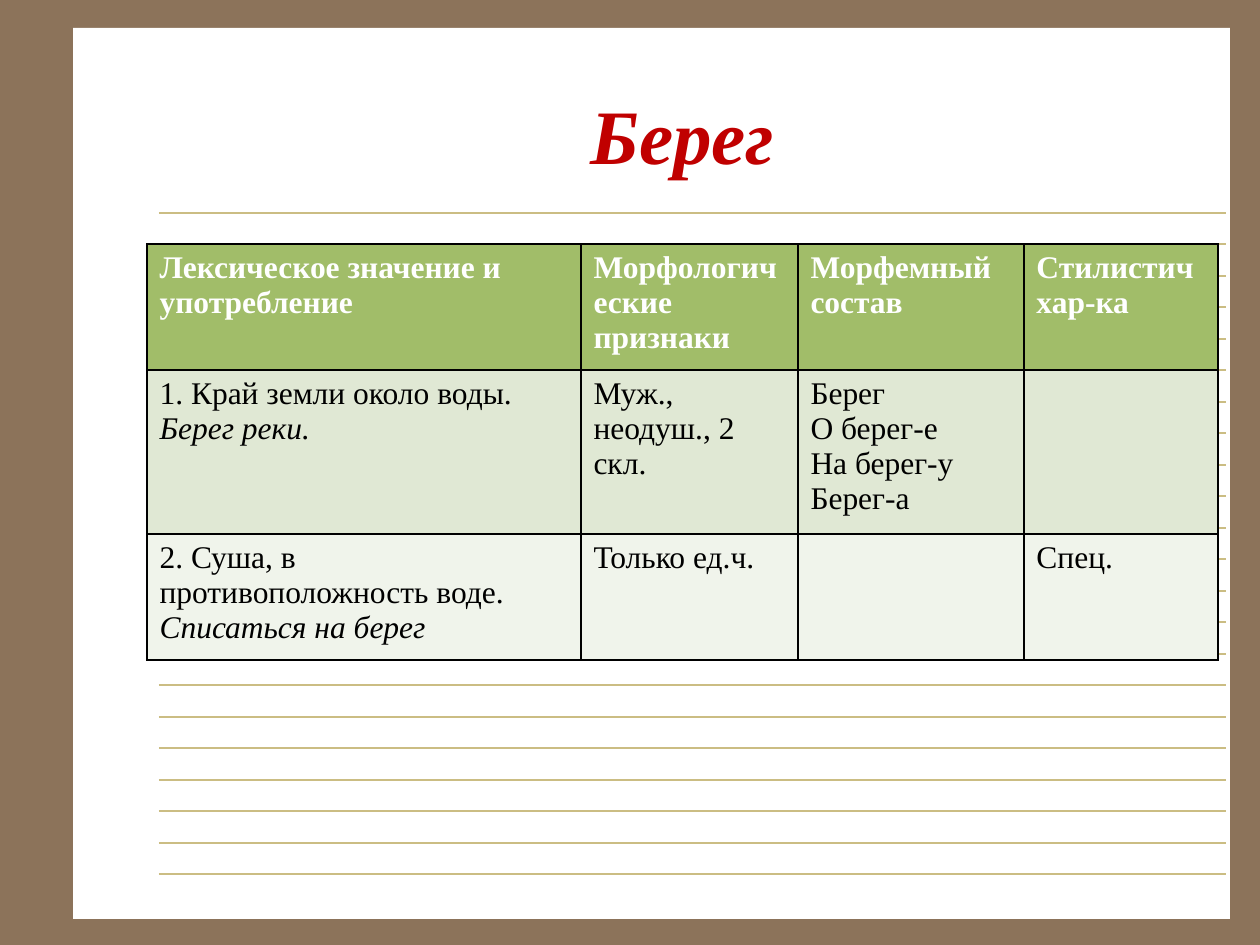
from pptx import Presentation
from pptx import util as u
from pptx.dml.color import RGBColor
from pptx.enum import shapes, text
from pptx.oxml import parse_xml
from pptx.oxml.ns import nsdecls

PX = 914400 // 126  # EMU per pixel
FONT = "Times New Roman"

BROWN = RGBColor(0x8C, 0x73, 0x5A)
WHITE = RGBColor(0xFF, 0xFF, 0xFF)
BLACK = RGBColor(0x00, 0x00, 0x00)
RULE = RGBColor(0xCB, 0xBD, 0x83)
RED = RGBColor(0xC0, 0x00, 0x00)
GREEN = RGBColor(0xA1, 0xBD, 0x69)
GREEN_BAND = RGBColor(0xE0, 0xE8, 0xD4)
GREEN_PALE = RGBColor(0xF0, 0xF4, 0xEB)

TITLE_FORMAT = {"size": u.Pt(44), "bold": True, "italic": True}
HEADER_FORMAT = {"size": u.Pt(18), "bold": True, "italic": False}
BODY_FORMAT = {"size": u.Pt(18), "bold": False, "italic": False}
EXAMPLE_FORMAT = {**BODY_FORMAT, "italic": True}

COLUMN_WIDTHS = [434, 217, 226, 194]
ROW_HEIGHTS = [117, 152, 117]
ROW_FILLS = [GREEN, GREEN_BAND, GREEN_PALE]

# Each cell is a list of paragraphs; a paragraph is (text, italic example)
ROWS = [
    [[("Лексическое значение и употребление", "")],
     [("Морфологические признаки", "")],
     [("Морфемный состав", "")],
     [("Стилистич хар-ка", "")]],
    [[("1. Край земли около воды. ", "Берег реки.")],
     [("Муж., неодуш., 2 скл.", "")],
     [("Берег", ""), ("О берег-е", ""), ("На берег-у", ""), ("Берег-а", "")],
     []],
    [[("2. Суша, в противоположность воде. ", "Списаться на берег")],
     [("Только ед.ч.", "")],
     [],
     [("Спец.", "")]],
]


def px(*lengths):
    return [length * PX for length in lengths]


def add_run(paragraph, words, color, format_values):
    run = paragraph.add_run()
    run.text = words
    run.font.name = FONT
    run.font.color.rgb = color
    for name, value in format_values.items():
        setattr(run.font, name, value)


def add_page(slide):
    page = slide.shapes.add_shape(shapes.MSO_SHAPE.RECTANGLE, *px(73, 28, 1157, 891))
    page.shadow.inherit = False
    page.fill.solid()
    page.fill.fore_color.rgb = WHITE
    page.line.fill.background()


def add_rule(slide, y):
    rule = slide.shapes.add_connector(
        shapes.MSO_CONNECTOR.STRAIGHT, *px(159, y, 1226, y))
    rule.line.color.rgb = RULE
    rule.line.width = u.Pt(0.75)
    rule._element.spPr.append(parse_xml(f"<a:effectLst {nsdecls('a')}/>"))


def add_title(slide, words):
    frame = slide.shapes.add_textbox(*px(147, 55, 1071, 158)).text_frame
    frame.word_wrap = True
    frame.vertical_anchor = text.MSO_ANCHOR.MIDDLE
    paragraph = frame.paragraphs[0]
    paragraph.alignment = text.PP_ALIGN.CENTER
    add_run(paragraph, words, RED, TITLE_FORMAT)


def add_borders(cell):
    properties = cell._tc.get_or_add_tcPr()
    for side in "LRTB":
        properties.append(parse_xml(
            f'<a:ln{side} {nsdecls("a")} w="{u.Pt(1)}"><a:solidFill>'
            f'<a:srgbClr val="{BLACK}"/></a:solidFill></a:ln{side}>'))


def fill_cell(cell, paragraphs, fill, color, format_values):
    add_borders(cell)
    cell.fill.solid()
    cell.fill.fore_color.rgb = fill
    frame = cell.text_frame
    for index, (words, example) in enumerate(paragraphs):
        paragraph = frame.add_paragraph() if index else frame.paragraphs[0]
        add_run(paragraph, words, color, format_values)
        if example:
            add_run(paragraph, example, color, EXAMPLE_FORMAT)


def add_word_table(slide):
    table = slide.shapes.add_table(
        len(ROWS), len(COLUMN_WIDTHS),
        *px(147, 244, sum(COLUMN_WIDTHS), sum(ROW_HEIGHTS))).table
    for column, width in zip(table.columns, COLUMN_WIDTHS):
        column.width = width * PX
    for row, height in zip(table.rows, ROW_HEIGHTS):
        row.height = height * PX
    for i, (cells, fill) in enumerate(zip(ROWS, ROW_FILLS)):
        color, format_values = (BLACK, BODY_FORMAT) if i else (WHITE, HEADER_FORMAT)
        for j, paragraphs in enumerate(cells):
            fill_cell(table.cell(i, j), paragraphs, fill, color, format_values)


def main():
    presentation = Presentation()
    presentation.slide_width, presentation.slide_height = u.Inches(10), u.Inches(7.5)
    slide = presentation.slides.add_slide(presentation.slide_layouts[6])

    # Notebook page: brown desk, white sheet, a rule every quarter inch
    slide.background.fill.solid()
    slide.background.fill.fore_color.rgb = BROWN
    add_page(slide)
    for index in range(22):
        add_rule(slide, 213 + index * 63 // 2)

    # Headword and its table
    add_title(slide, "Берег")
    add_word_table(slide)

    presentation.save("out.pptx")


if __name__ == "__main__":
    main()
